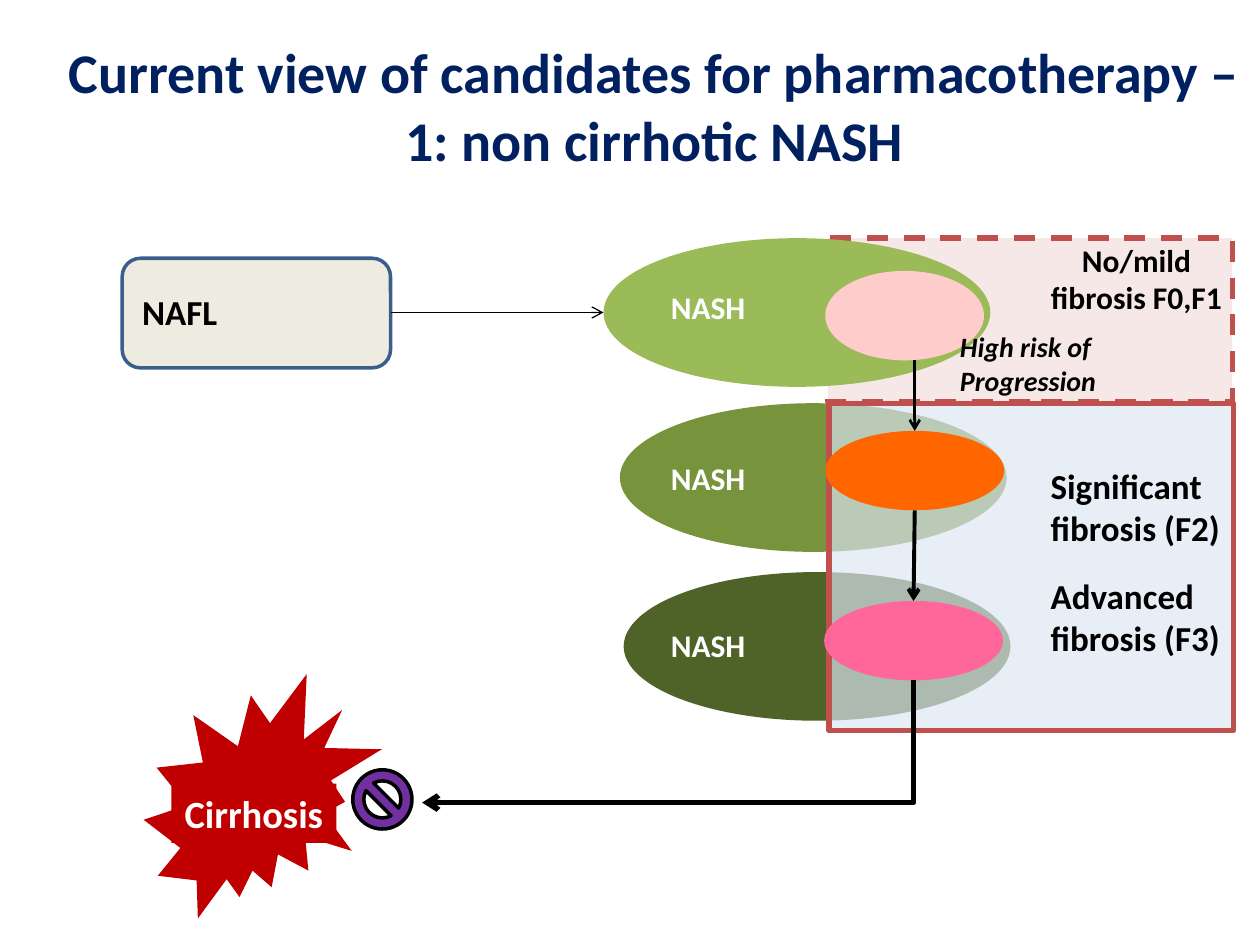
"""Build the slide on candidates for pharmacotherapy in non cirrhotic NASH."""
from dataclasses import dataclass
from typing import Any, Optional

import pptx
import pptx.dml.color
import pptx.enum.dml
import pptx.enum.shapes
import pptx.enum.text
import pptx.oxml.ns
import pptx.oxml.xmlchemy
import pptx.util
from lxml import etree

Inches = pptx.util.Inches
qn = pptx.oxml.ns.qn
Preset = pptx.enum.shapes.MSO_SHAPE
Align = pptx.enum.text.PP_ALIGN
Anchor = pptx.enum.text.MSO_ANCHOR
Box = tuple[float, float, float, float]


@dataclass(frozen=True)
class Region:
    preset: Any
    box: Box
    fill: str
    line: Optional[str] = None
    weight: float = 0
    dashed: bool = False
    opacity: int = 100


@dataclass(frozen=True)
class Label:
    text: str
    box: Box
    size: int = 20
    color: str = "000000"
    italic: bool = False
    centered: bool = False
    wrap: bool = False


@dataclass(frozen=True)
class Arrow:
    start: tuple[float, float]
    end: tuple[float, float]
    weight: float


OVAL = Preset.OVAL
NASH_SIZE = (3.07, 1.18)
STAGE_SIZE = (1.42, 0.63)
REGIONS = [
    Region(Preset.RECTANGLE, (6.57, 1.89, 3.21, 1.3), "F2DCDB", "C0504D", 3, True, 64),
    Region(OVAL, (4.79, 1.89, *NASH_SIZE), "9BBB59"),
    Region(OVAL, (4.95, 4.54, *NASH_SIZE), "4F6228"),
    Region(OVAL, (4.92, 3.2, *NASH_SIZE), "77933C"),
    Region(Preset.RECTANGLE, (6.58, 3.2, 3.21, 2.6), "DCE6F2", "C0504D", 3, opacity=67),
    Region(Preset.ROUNDED_RECTANGLE, (0.97, 2.05, 2.13, 0.87), "EEECE1", "3A5F8C", 2),
    Region(OVAL, (6.55, 3.42, *STAGE_SIZE), "FF6600"),
    Region(OVAL, (6.54, 4.77, *STAGE_SIZE), "FF6699"),
]
CIRRHOSIS_BURST = Region(Preset.EXPLOSION2, (1.14, 5.35, 1.89, 1.94), "C00000")
CIRRHOSIS_BAND = Region(Preset.RECTANGLE, (1.36, 6.22, 1.31, 0.47), "C00000")
HIGH_RISK = Region(OVAL, (6.55, 2.15, 1.26, 0.71), "FFCCCC")
STOP_SIGN = Region(Preset.NO_SYMBOL, (2.8, 6.11, 0.47, 0.47), "7030A0", "000000", 2)

ARROWS = [
    Arrow((7.26, 2.58), (7.26, 3.42), 1.5),
    Arrow((7.26, 4.05), (7.25, 4.77), 2.25),
    Arrow((3.1, 2.48), (4.79, 2.48), 0.75),
]
TO_CIRRHOSIS = Arrow((7.25, 5.4), (3.35, 6.37), 3)

LABELS = [
    Label("Significant\nfibrosis (F2)", (8.24, 3.64, 1.56, 0.77)),
    Label("Advanced\nfibrosis (F3)", (8.24, 4.51, 1.56, 0.77)),
    Label("NAFL", (1.03, 2.26, 0.8, 0.44)),
    *(Label("NASH", (4.84, top, 1.56, 0.4), 18, "FFFFFF", centered=True, wrap=True)
      for top in (2.24, 3.59, 4.92)),
    Label("No/mild fibrosis F0,F1", (8.24, 1.86, 1.56, 0.71), 18, centered=True, wrap=True),
    Label("High risk of\nProgression", (7.52, 2.57, 1.31, 0.64), 16, italic=True),
]


def rgb(value: str) -> pptx.dml.color.RGBColor:
    return pptx.dml.color.RGBColor.from_string(value)


def write(frame: Any, text: str, *, size: int, color: str = "000000", italic: bool = False,
          centered: bool = False, wrap: bool = True, anchor: Any = Anchor.TOP) -> None:
    frame.text = text
    frame.word_wrap = wrap
    frame.vertical_anchor = anchor
    for paragraph in frame.paragraphs:
        paragraph.alignment = Align.CENTER if centered else Align.LEFT
        for run in paragraph.runs:
            run.font.name = "Calibri"
            run.font.size = pptx.util.Pt(size)
            run.font.bold = True
            run.font.italic = italic
            run.font.color.rgb = rgb(color)


def draw_region(shapes: Any, region: Region) -> Any:
    shape = shapes.add_shape(region.preset, *map(Inches, region.box))
    shape.shadow.inherit = False
    shape.fill.solid()
    shape.fill.fore_color.rgb = rgb(region.fill)
    if region.opacity < 100:
        tint = shape._element.spPr.find(qn("a:solidFill"))[0]
        etree.SubElement(tint, qn("a:alpha")).set("val", str(region.opacity * 1000))
    if region.line is None:
        shape.line.fill.background()
        return shape
    shape.line.color.rgb = rgb(region.line)
    shape.line.width = pptx.util.Pt(region.weight)
    if region.dashed:
        shape.line.dash_style = pptx.enum.dml.MSO_LINE.DASH
    return shape


def draw_arrow(shapes: Any, arrow: Arrow) -> Any:
    connector = shapes.add_connector(
        pptx.enum.shapes.MSO_CONNECTOR.STRAIGHT, *map(Inches, arrow.start + arrow.end))
    connector.line.color.rgb = rgb("000000")
    connector.line.width = pptx.util.Pt(arrow.weight)
    properties = connector._element.spPr
    etree.SubElement(properties.find(qn("a:ln")), qn("a:tailEnd")).set("type", "arrow")
    etree.SubElement(properties, qn("a:effectLst"))
    return connector


def draw_corner_arrow(shapes: Any, arrow: Arrow) -> None:
    (right, top), (left, bottom) = arrow.start, arrow.end
    drop, reach = bottom - top, right - left
    x, y = (left + right - drop) / 2, (top + bottom - reach) / 2
    connector = draw_arrow(shapes, Arrow((x, y), (x + drop, y + reach), arrow.weight))
    properties = connector._element.spPr
    properties.find(qn("a:xfrm")).set("rot", str(90 * 60000))
    properties.find(qn("a:prstGeom")).set("prst", "bentConnector2")


def draw_label(shapes: Any, label: Label) -> None:
    box = shapes.add_textbox(*map(Inches, label.box))
    write(box.text_frame, label.text, size=label.size, color=label.color,
          italic=label.italic, centered=label.centered, wrap=label.wrap)


def main() -> None:
    deck = pptx.Presentation()
    deck.slide_width, deck.slide_height = Inches(10), Inches(7.5)
    slide = deck.slides.add_slide(deck.slide_layouts[5])
    shapes = slide.shapes

    title = shapes.title
    title.left, title.top, title.width, title.height = map(Inches, (0.35, 0.21, 9.69, 1.25))
    write(title.text_frame,
          "Current view of candidates for pharmacotherapy – 1: non cirrhotic NASH",
          size=32, color="002060", centered=True, anchor=Anchor.MIDDLE)

    for region in REGIONS:
        draw_region(shapes, region)

    cirrhosis = shapes.add_group_shape().shapes
    draw_region(cirrhosis, CIRRHOSIS_BURST)
    band = draw_region(cirrhosis, CIRRHOSIS_BAND)
    write(band.text_frame, "Cirrhosis", size=22, color="FFFFFF", centered=True, wrap=False)

    for arrow in ARROWS:
        draw_arrow(shapes, arrow)
    draw_corner_arrow(shapes, TO_CIRRHOSIS)
    draw_region(shapes, HIGH_RISK)
    for label in LABELS:
        draw_label(shapes, label)
    draw_region(shapes, STOP_SIGN)

    deck.save("out.pptx")


if __name__ == "__main__":
    main()
